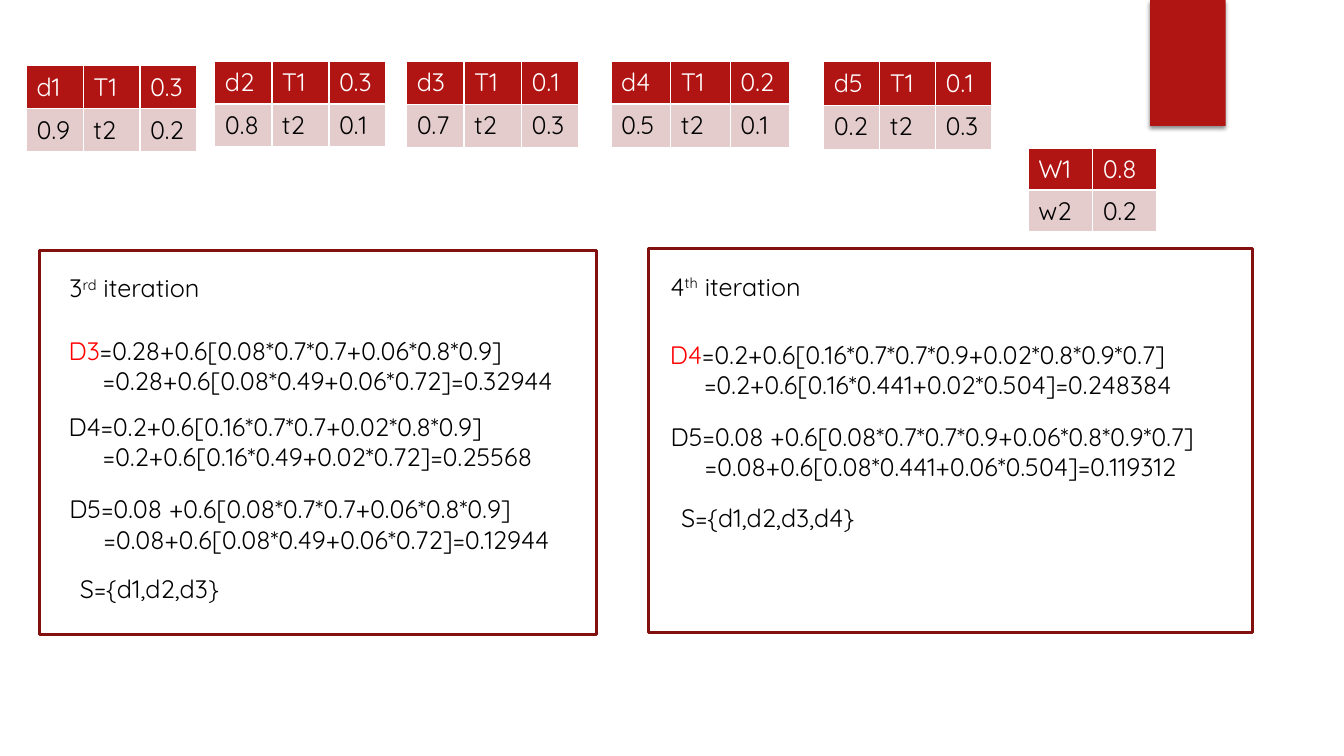
from dataclasses import dataclass

from lxml.etree import SubElement
from pptx import Presentation
from pptx.dml.color import RGBColor
from pptx.enum.shapes import MSO_SHAPE as SHAPE
from pptx.enum.text import MSO_AUTO_SIZE as AUTO_SIZE
from pptx.oxml import parse_xml
from pptx.oxml.ns import nsdecls, qn
from pptx.util import Pt

RED, DARK_RED, PINK = "B01513", "82100E", "E4CCCC"
BLACK, WHITE, HIGHLIGHT = "000000", "FFFFFF", "FF0000"
FORMAT = {"name": "Quicksand", "size": Pt(18), "bold": False}
STEP_INDENT = 24.5


@dataclass
class Grid:
    left: float
    top: float
    col_width: float
    row_height: float
    rows: list[list[str]]


@dataclass
class Run:
    text: str
    color: str = BLACK
    raised: bool = False


@dataclass
class Block:
    left: float
    top: float
    width: float
    lines: list[list[Run]]


@dataclass
class Panel:
    left: float
    top: float
    width: float
    height: float
    blocks: list[Block]


def rgb(value: str) -> RGBColor:
    return RGBColor.from_string(value)


def add_run(p, run: Run) -> None:
    r = p.add_run()
    r.text = run.text
    for name, value in FORMAT.items():
        setattr(r.font, name, value)
    r.font.color.rgb = rgb(run.color)
    if run.raised:
        r.font._element.set("baseline", "30000")


def border_cell(cell) -> None:
    props = cell._tc.get_or_add_tcPr()
    for i, side in enumerate(("lnL", "lnR", "lnT", "lnB")):
        line = parse_xml(
            f'<a:{side} {nsdecls("a")} w="12700"><a:solidFill>'
            f'<a:srgbClr val="{WHITE}"/></a:solidFill></a:{side}>')
        props.insert(i, line)


def draw_grid(slide, grid: Grid) -> None:
    n_rows, n_cols = len(grid.rows), len(grid.rows[0])
    table = slide.shapes.add_table(
        n_rows, n_cols, Pt(grid.left), Pt(grid.top),
        Pt(grid.col_width * n_cols), Pt(grid.row_height * n_rows)).table
    for col in table.columns:
        col.width = Pt(grid.col_width)
    for i, texts in enumerate(grid.rows):
        table.rows[i].height = Pt(grid.row_height)
        fill, color = (RED, WHITE) if i == 0 else (PINK, BLACK)
        for j, text in enumerate(texts):
            cell = table.cell(i, j)
            cell.fill.solid()
            cell.fill.fore_color.rgb = rgb(fill)
            border_cell(cell)
            add_run(cell.text_frame.paragraphs[0], Run(text, color))


def draw_block(slide, block: Block) -> None:
    height = 29 if len(block.lines) == 1 else 51
    sp = slide.shapes.add_textbox(
        Pt(block.left), Pt(block.top), Pt(block.width), Pt(height))
    tf = sp.text_frame
    tf.word_wrap = True
    tf.auto_size = AUTO_SIZE.SHAPE_TO_FIT_TEXT
    for i, runs in enumerate(block.lines):
        p = tf.add_paragraph() if i else tf.paragraphs[0]
        if i:
            p._p.get_or_add_pPr().set("marL", str(Pt(STEP_INDENT)))
        for run in runs:
            add_run(p, run)


def draw_panel(slide, panel: Panel) -> None:
    for block in panel.blocks:
        draw_block(slide, block)
    sp = slide.shapes.add_shape(
        SHAPE.RECTANGLE, Pt(panel.left), Pt(panel.top),
        Pt(panel.width), Pt(panel.height))
    sp.shadow.inherit = False
    sp.fill.background()
    sp.line.color.rgb = rgb(DARK_RED)
    sp.line.width = Pt(2.25)


def draw_ribbon(slide) -> None:
    sp = slide.shapes.add_shape(
        SHAPE.RECTANGLE, Pt(821.5), Pt(0), Pt(54), Pt(90))
    sp.shadow.inherit = False
    sp.fill.solid()
    sp.fill.fore_color.rgb = rgb(RED)
    sp.line.fill.background()
    effects = sp._element.spPr.find(qn("a:effectLst"))
    shadow = SubElement(effects, qn("a:outerShdw"), blurRad=str(Pt(3)),
                        dist=str(Pt(2)), dir="5400000", rotWithShape="0")
    color = SubElement(shadow, qn("a:srgbClr"), val=BLACK)
    SubElement(color, qn("a:alpha"), val="45000")


def document(left: float, top: float, col_width: float, row_height: float,
             name: str, t1: str, score: str, t2: str) -> Grid:
    return Grid(left, top, col_width, row_height,
                [[name, "T1", t1], [score, "t2", t2]])


def title(number: str, suffix: str) -> list[list[Run]]:
    return [[Run(number), Run(suffix, raised=True), Run(" iteration")]]


def steps(name: str, first: str, second: str,
          color: str = BLACK) -> list[list[Run]]:
    return [[Run(name, color), Run(first)], [Run(second)]]


# Score tables
GRIDS = [
    document(19, 47, 40.5, 30.8, "d1", "0.3", "0.9", "0.2"),
    document(153.5, 44, 40.75, 30.3, "d2", "0.3", "0.8", "0.1"),
    document(290.5, 43.5, 41, 31, "d3", "0.1", "0.7", "0.3"),
    document(436.5, 43.5, 42.6, 30.8, "d4", "0.2", "0.5", "0.1"),
    document(588.5, 44.2, 39.9, 31.2, "d5", "0.1", "0.2", "0.3"),
    Grid(734.5, 106, 46, 29.2, [["W1", "0.8"], ["w2", "0.2"]]),
]

# Iteration panels
PANELS = [
    Panel(28.2, 179, 397.8, 274.5, [
        Block(42.5, 191, 135, title("3", "rd")),
        Block(42, 236, 385, steps(
            "D3", "=0.28+0.6[0.08*0.7*0.7+0.06*0.8*0.9]",
            "=0.28+0.6[0.08*0.49+0.06*0.72]=0.32944", HIGHLIGHT)),
        Block(42, 290, 393, steps(
            "D4", "=0.2+0.6[0.16*0.7*0.7+0.02*0.8*0.9]",
            "=0.2+0.6[0.16*0.49+0.02*0.72]=0.25568")),
        Block(42.5, 349, 393, steps(
            "D5", "=0.08 +0.6[0.08*0.7*0.7+0.06*0.8*0.9]",
            "=0.08+0.6[0.08*0.49+0.06*0.72]=0.12944")),
        Block(50, 406, 146, [[Run("S={d1,d2,d3}")]]),
    ]),
    Panel(463, 177.6, 432, 274.5, [
        Block(472, 190, 138, title("4", "th")),
        Block(471.5, 238.5, 423, steps(
            "D4", "=0.2+0.6[0.16*0.7*0.7*0.9+0.02*0.8*0.9*0.7]",
            "=0.2+0.6[0.16*0.441+0.02*0.504]=0.248384", HIGHLIGHT)),
        Block(472, 297.5, 423, steps(
            "D5", "=0.08 +0.6[0.08*0.7*0.7*0.9+0.06*0.8*0.9*0.7]",
            "=0.08+0.6[0.08*0.441+0.06*0.504]=0.119312")),
        Block(479.5, 355, 166, [[Run("S={d1,d2,d3,d4}")]]),
    ]),
]


def main() -> None:
    prs = Presentation()
    prs.slide_width, prs.slide_height = Pt(960), Pt(540)
    slide = prs.slides.add_slide(prs.slide_layouts[6])
    draw_ribbon(slide)
    for grid in GRIDS:
        draw_grid(slide, grid)
    for panel in PANELS:
        draw_panel(slide, panel)
    prs.save("out.pptx")


if __name__ == "__main__":
    main()
